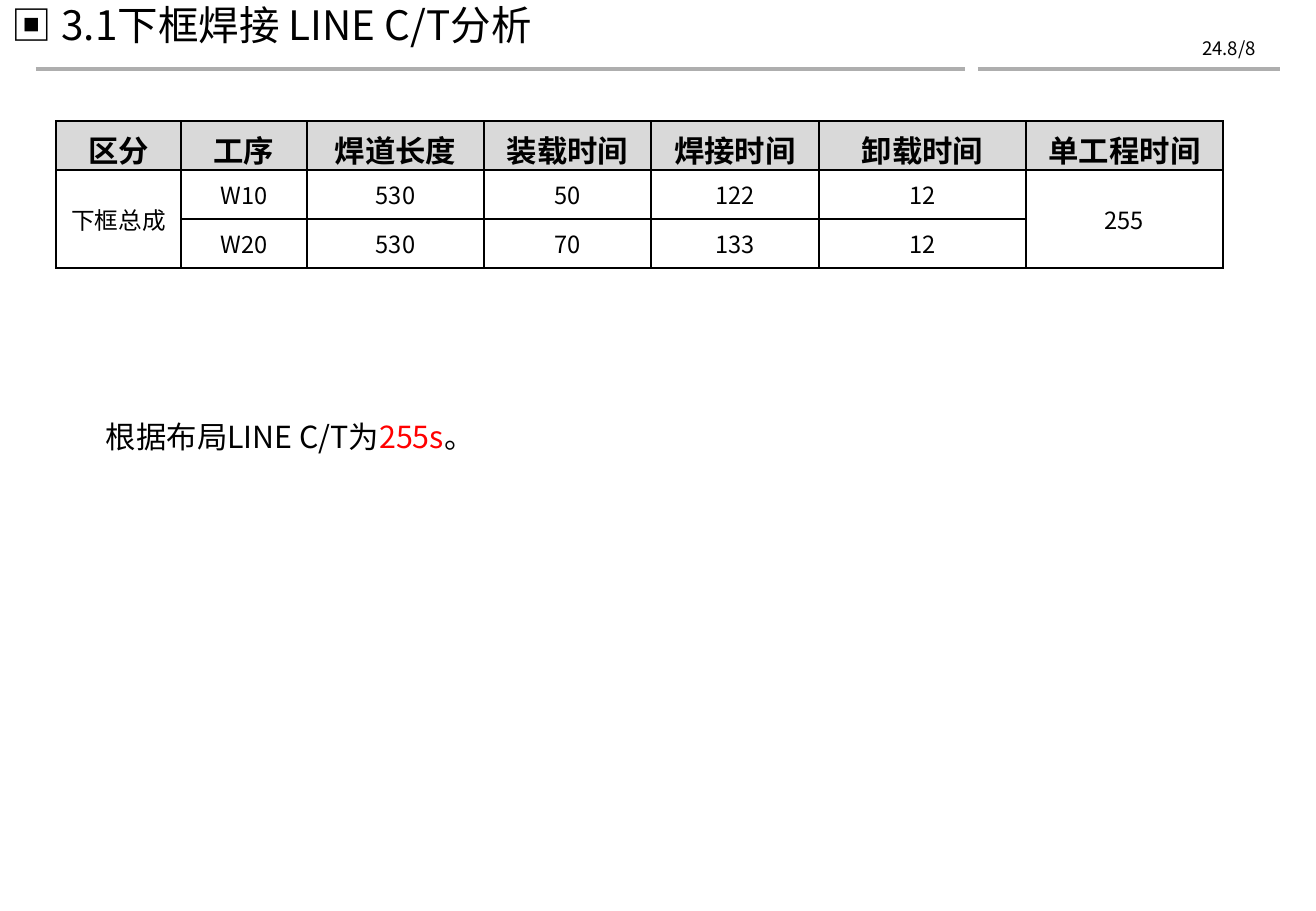
from lxml import etree
from pptx import Presentation
from pptx import util as u
from pptx.dml import color
from pptx.enum import shapes, text
from pptx.oxml import ns

PX = 7526
CJK = "Noto Sans CJK SC"


def rgb(value):
    return color.RGBColor.from_string(value)


def style(paragraph, size, face=CJK, bold=False, align=text.PP_ALIGN.LEFT):
    paragraph.alignment = align
    font = paragraph.font
    font.size, font.name, font.bold = u.Pt(size), face, bold
    font.color.rgb = rgb("000000")
    defaults = paragraph._p.pPr.find(ns.qn("a:defRPr"))
    etree.SubElement(defaults, ns.qn("a:ea"), typeface=face)


deck = Presentation()
deck.slide_width, deck.slide_height = 1316 * PX, 911 * PX
slide = deck.slides.add_slide(deck.slide_layouts[6])

for start, end in [(36, 965), (978, 1280)]:
    rule = slide.shapes.add_connector(
        shapes.MSO_CONNECTOR.STRAIGHT, start * PX, 69 * PX, end * PX, 69 * PX)
    rule.line.color.rgb = rgb("AEAEAE")
    rule.line.width = u.Pt(2)
    etree.SubElement(rule._element.spPr, ns.qn("a:effectLst"))

captions = [
    (1136, 33, 132, 35, 4, 11, "Noto Sans CJK KR", text.PP_ALIGN.RIGHT,
     [("24.8/8", None)]),
    (0, 0, 1108, 61, 0, 24, CJK, text.PP_ALIGN.LEFT,
     [("▣ 3.1下框焊接 LINE C/T分析", None)]),
    (94, 418, 746, 49, 0, 18, CJK, text.PP_ALIGN.LEFT,
     [("根据布局LINE C/T为", None), ("255s", "FF0000"), ("。", None)]),
]
for left, top, width, height, inset, size, face, align, pieces in captions:
    caption = slide.shapes.add_textbox(left * PX, top * PX, width * PX, height * PX)
    frame = caption.text_frame
    frame.word_wrap = True
    frame.margin_top, frame.margin_bottom = inset * PX, 0
    paragraph = frame.paragraphs[0]
    style(paragraph, size, face, align=align)
    for words, tint in pieces:
        run = paragraph.add_run()
        run.text = words
        if tint:
            run.font.color.rgb = rgb(tint)

cycle_times = [
    ["区分", "工序", "焊道长度", "装载时间", "焊接时间", "卸载时间", "单工程时间"],
    ["下框总成", "W10", "530", "50", "122", "12", "255"],
    ["", "W20", "530", "70", "133", "12", ""],
]
column_widths = [125, 126, 177, 167, 168, 207, 197]
row_height = 49
table = slide.shapes.add_table(
    3, 7, 56 * PX, 121 * PX, sum(column_widths) * PX, 3 * row_height * PX).table
table.first_row = table.horz_banding = False
for column, width in zip(table.columns, column_widths):
    column.width = width * PX

for r, values in enumerate(cycle_times):
    table.rows[r].height = row_height * PX
    header = r == 0
    for c, value in enumerate(values):
        cell = table.cell(r, c)
        cell.text = value
        style(cell.text_frame.paragraphs[0], 18 if header else 14,
              bold=header, align=text.PP_ALIGN.CENTER)
        properties = cell._tc.get_or_add_tcPr()
        for side in ("lnL", "lnR", "lnT", "lnB"):
            border = etree.SubElement(properties, ns.qn("a:" + side), w=str(u.Pt(1)))
            paint = etree.SubElement(border, ns.qn("a:solidFill"))
            etree.SubElement(paint, ns.qn("a:srgbClr"), val="000000")
        if header:
            cell.fill.solid()
            cell.fill.fore_color.rgb = rgb("D9D9D9")
            cell.margin_bottom = 0
        else:
            cell.fill.background()
            cell.vertical_anchor = text.MSO_ANCHOR.MIDDLE

for c in (0, 6):
    table.cell(1, c).merge(table.cell(2, c))

deck.save("out.pptx")
